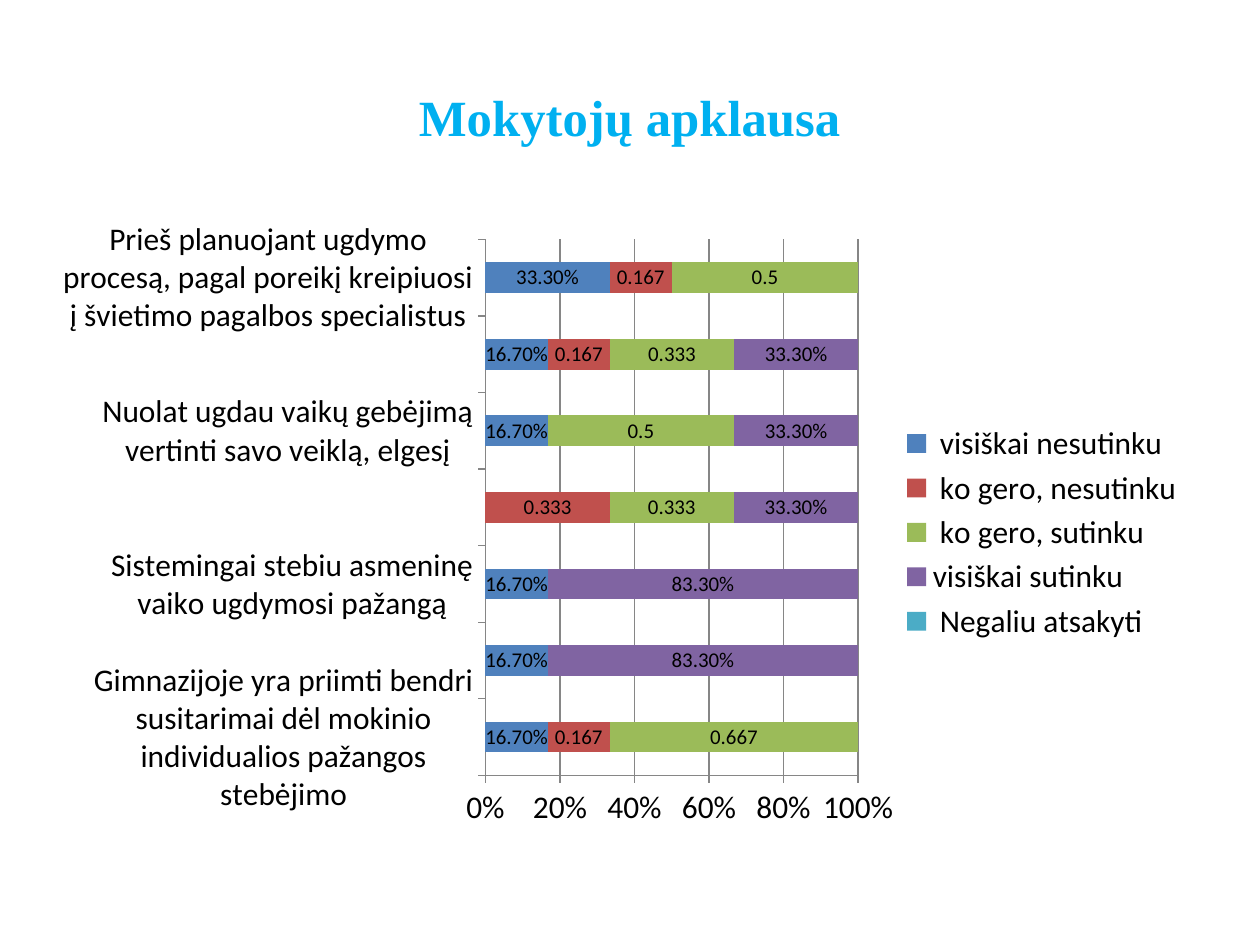
"""Build a survey slide with a title and a stacked percentage bar chart."""
from dataclasses import dataclass

from lxml import etree
from pptx import Presentation
from pptx import util as u
from pptx.chart import data as chart_data
from pptx.dml.color import RGBColor
from pptx.enum import chart as charts, text
from pptx.oxml import ns


@dataclass(frozen=True)
class Theme:
    title_font: str = "Times New Roman"
    chart_font: str = "Calibri"
    title_color: str = "00B0F0"
    text_color: str = "000000"
    line_color: str = "868686"
    title_size: int = 29
    chart_size: int = 18
    label_size: int = 12
    line_width: float = 0.75


THEME = Theme()
PLOT_AREA = {"x": 0.37, "y": 0.03, "w": 0.33, "h": 0.86}
CATEGORIES = [
    "Gimnazijoje yra priimti bendri susitarimai dėl mokinio individualios pažangos stebėjimo",
    "",
    "Sistemingai stebiu asmeninę vaiko ugdymosi pažangą",
    "",
    "Nuolat ugdau vaikų gebėjimą vertinti savo veiklą, elgesį",
    "",
    "Prieš planuojant ugdymo procesą, pagal poreikį kreipiuosi į švietimo pagalbos specialistus",
]
ANSWERS = [
    (" visiškai nesutinku", "4F81BD", "0.00%", [0.167, 0.167, 0.167, None, 0.167, 0.167, 0.333]),
    (" ko gero, nesutinku", "C0504D", "General", [0.167, None, None, 0.333, None, 0.167, 0.167]),
    (" ko gero, sutinku", "9BBB59", "General", [0.667, None, None, 0.333, 0.5, 0.333, 0.5]),
    ("visiškai sutinku", "8064A2", "0.00%", [None, 0.833, 0.833, 0.333, 0.333, 0.333, None]),
    (" Negaliu atsakyti", "4BACC6", "General", [None] * len(CATEGORIES)),
]


def style_font(font, name, size, color, bold=False):
    """Apply a typeface, size, colour and weight to a font."""
    font.name, font.size, font.bold = name, u.Pt(size), bold
    font.color.rgb = RGBColor.from_string(color)


def style_line(line):
    """Give an axis or grid line the theme colour and width."""
    line.color.rgb = RGBColor.from_string(THEME.line_color)
    line.width = u.Pt(THEME.line_width)


def add_title(slide, wording):
    """Fill and place the title placeholder."""
    title = slide.shapes.title
    title.left, title.top, title.width, title.height = map(u.Pt, (36, 21.6, 648, 90))
    title.text_frame.vertical_anchor = text.MSO_ANCHOR.MIDDLE
    paragraph = title.text_frame.paragraphs[0]
    paragraph.alignment = text.PP_ALIGN.CENTER
    run = paragraph.add_run()
    run.text = wording
    style_font(run.font, THEME.title_font, THEME.title_size, THEME.title_color, bold=True)


def place_plot_area(chart):
    """Fix the inner plot area as fractions of the chart."""
    plot_area = chart.plots[0]._element.getparent()
    for old_layout in plot_area.findall(ns.qn("c:layout")):
        plot_area.remove(old_layout)
    layout = etree.Element(ns.qn("c:layout"))
    manual = etree.SubElement(layout, ns.qn("c:manualLayout"))
    settings = {"layoutTarget": "inner", "xMode": "edge", "yMode": "edge", **PLOT_AREA}
    for name, value in settings.items():
        etree.SubElement(manual, ns.qn(f"c:{name}")).set("val", str(value))
    plot_area.insert(0, layout)


def style_axes(chart):
    """Format both axes and the vertical grid lines."""
    for axis in (chart.category_axis, chart.value_axis):
        axis.major_tick_mark = charts.XL_TICK_MARK.OUTSIDE
        axis.minor_tick_mark = charts.XL_TICK_MARK.NONE
        style_line(axis.format.line)
    value_axis = chart.value_axis
    value_axis.has_major_gridlines = True
    style_line(value_axis.major_gridlines.format.line)
    value_axis.tick_labels.number_format = "0%"
    value_axis.tick_labels.number_format_is_linked = False


def style_series(series, color, number_format):
    """Colour one answer and label its bars."""
    series.format.fill.solid()
    series.format.fill.fore_color.rgb = RGBColor.from_string(color)
    labels = series.data_labels
    labels.show_value = True
    labels.number_format = number_format
    labels.number_format_is_linked = False
    style_font(labels.font, THEME.chart_font, THEME.label_size, THEME.text_color)


def add_survey_chart(slide):
    """Add the stacked bar chart of survey answers."""
    survey = chart_data.CategoryChartData()
    survey.categories = CATEGORIES
    for name, _, number_format, values in ANSWERS:
        survey.add_series(name, values, number_format)
    frame = slide.shapes.add_chart(
        charts.XL_CHART_TYPE.BAR_STACKED_100, *map(u.Pt, (36, 126, 648, 356.4)), survey)
    chart = frame.chart
    chart.has_title = False
    style_font(chart.font, THEME.chart_font, THEME.chart_size, THEME.text_color)
    chart.has_legend = True
    chart.legend.position = charts.XL_LEGEND_POSITION.RIGHT
    chart.legend.include_in_layout = False
    plot = chart.plots[0]
    plot.gap_width, plot.overlap, plot.vary_by_categories = 150, 100, False
    for series, (_, color, number_format, _) in zip(plot.series, ANSWERS):
        style_series(series, color, number_format)
    style_axes(chart)
    place_plot_area(chart)


def main():
    """Build and save the presentation."""
    presentation = Presentation()
    presentation.slide_width, presentation.slide_height = u.Pt(720), u.Pt(540)
    slide = presentation.slides.add_slide(presentation.slide_layouts[5])
    add_title(slide, "Mokytojų apklausa")
    add_survey_chart(slide)
    presentation.save("out.pptx")


if __name__ == "__main__":
    main()
